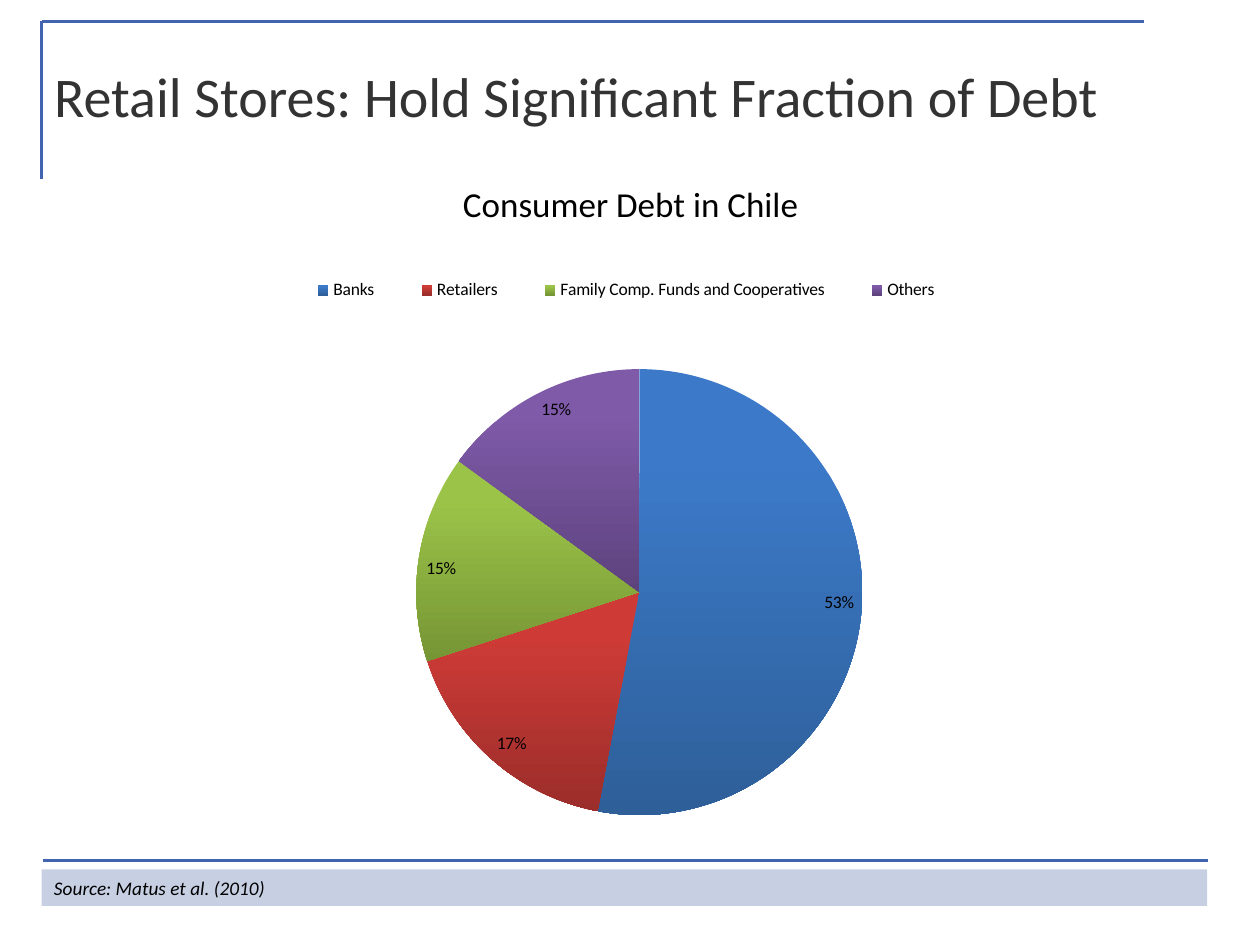
"""Build a slide with a pie chart of consumer debt in Chile."""
from lxml.etree import SubElement
from pptx import Presentation
from pptx.chart.data import CategoryChartData
from pptx.dml.color import RGBColor
from pptx.enum.chart import XL_CHART_TYPE, XL_LABEL_POSITION, XL_LEGEND_POSITION
from pptx.enum.shapes import MSO_CONNECTOR, MSO_SHAPE
from pptx.enum.text import MSO_ANCHOR, MSO_AUTO_SIZE, PP_ALIGN
from pptx.oxml import parse_xml
from pptx.oxml.ns import nsdecls, qn
from pptx.util import Inches, Pt

DEBT_SHARES = [
    ("Banks", 0.53, "3C7AC9", "2E5F99"),
    ("Retailers", 0.17, "CE3B37", "9B2D2A"),
    ("Family Comp. Funds and Cooperatives", 0.15, "9BC348", "769535"),
    ("Others", 0.15, "7F5AA8", "5D437E"),
]


def color(value):
    return RGBColor.from_string(value)


def place(element, index, left, top, width, height, inner=False):
    for layout in element.findall(qn("c:layout")):
        element.remove(layout)
    target = '<c:layoutTarget val="inner"/>' if inner else ""
    lengths = {"x": left, "y": top, "w": width, "h": height}
    parts = "".join(f'<c:{name} val="{value}"/>' for name, value in lengths.items())
    layout = (
        f"<c:layout {nsdecls('c')}><c:manualLayout>{target}"
        f'<c:xMode val="edge"/><c:yMode val="edge"/>{parts}'
        "</c:manualLayout></c:layout>"
    )
    element.insert(index, parse_xml(layout))


class SlideBuilder:
    font = "Calibri"
    accent = "4264B0"
    band = "C7D0E3"

    def __init__(self, presentation):
        self.slide = presentation.slides.add_slide(presentation.slide_layouts[5])

    def add_text(self, shape, text, size, text_color, align=PP_ALIGN.LEFT, italic=False):
        paragraph = shape.text_frame.paragraphs[0]
        paragraph.alignment = align
        run = paragraph.add_run()
        run.text = text
        run.font.name = self.font
        run.font.size = Pt(size)
        run.font.italic = italic
        run.font.color.rgb = color(text_color)

    def title(self, text, left, top, width, height):
        shape = self.slide.shapes.title
        shape.left, shape.top = Inches(left), Inches(top)
        shape.width, shape.height = Inches(width), Inches(height)
        shape.text_frame.vertical_anchor = MSO_ANCHOR.MIDDLE
        shape.text_frame.auto_size = MSO_AUTO_SIZE.NONE
        self.add_text(shape, text, 32, "333333")

    def line(self, *ends):
        connector = self.slide.shapes.add_connector(
            MSO_CONNECTOR.STRAIGHT, *(Inches(end) for end in ends)
        )
        connector.line.color.rgb = color(self.accent)
        connector.line.width = Pt(1.5)
        SubElement(connector._element.spPr, qn("a:effectLst"))

    def heading(self, text, left, top, width, height):
        shape = self.slide.shapes.add_textbox(
            Inches(left), Inches(top), Inches(width), Inches(height)
        )
        shape.text_frame.word_wrap = False
        self.add_text(shape, text, 20, "000000", PP_ALIGN.CENTER)

    def source(self, text, left, top, width, height):
        shape = self.slide.shapes.add_shape(
            MSO_SHAPE.RECTANGLE, Inches(left), Inches(top), Inches(width), Inches(height)
        )
        shape.shadow.inherit = False
        shape.fill.solid()
        shape.fill.fore_color.rgb = color(self.band)
        shape.line.fill.background()
        shape.text_frame.word_wrap = True
        shape.text_frame.vertical_anchor = MSO_ANCHOR.MIDDLE
        self.add_text(shape, text, 11, "000000", italic=True)

    def pie(self, shares, left, top, width, height):
        data = CategoryChartData(number_format="0%")
        data.categories = [share[0] for share in shares]
        data.add_series("Series 1", [share[1] for share in shares])
        chart = self.slide.shapes.add_chart(
            XL_CHART_TYPE.PIE,
            Inches(left), Inches(top), Inches(width), Inches(height), data,
        ).chart
        chart.has_title = False
        chart.font.name = self.font
        chart.font.size = Pt(10)
        chart.font.color.rgb = color("000000")
        chart.has_legend = True
        chart.legend.position = XL_LEGEND_POSITION.TOP
        chart.legend.include_in_layout = False
        place(chart.legend._element, 1, 0.1, 0.07, 0.8, 0.08)
        place(chart._chartSpace.chart.plotArea, 0, 0.26, 0.23, 0.51, 0.72, True)
        plot = chart.plots[0]
        plot.vary_by_categories = True
        plot.has_data_labels = True
        labels = plot.data_labels
        labels.show_value = True
        labels.show_percentage = False
        labels.number_format = "0%"
        labels.number_format_is_linked = False
        labels.position = XL_LABEL_POSITION.INSIDE_END
        for index, (_, _, light, dark) in enumerate(shares):
            fill = plot.series[0].points[index].format.fill
            fill.gradient()
            fill.gradient_angle = 270
            start, end = fill.gradient_stops
            start.position = 0.2
            start.color.rgb = color(light)
            end.color.rgb = color(dark)


def main():
    presentation = Presentation()
    presentation.slide_width, presentation.slide_height = Inches(10), Inches(7.5)
    builder = SlideBuilder(presentation)
    builder.line(9.08, 0.17, 0.33, 0.17)
    builder.line(0.33, 0.17, 0.33, 1.42)
    builder.line(9.59, 6.83, 0.34, 6.83)
    builder.pie(DEBT_SHARES, 1.5, 1.75, 6.94, 5)
    builder.heading("Consumer Debt in Chile", 3.56, 1.4, 2.89, 0.44)
    builder.title("Retail Stores: Hold Significant Fraction of Debt", 0.33, 0.17, 9.5, 1.17)
    builder.source("Source: Matus et al. (2010)", 0.33, 6.9, 9.25, 0.29)
    presentation.save("out.pptx")


if __name__ == "__main__":
    main()
